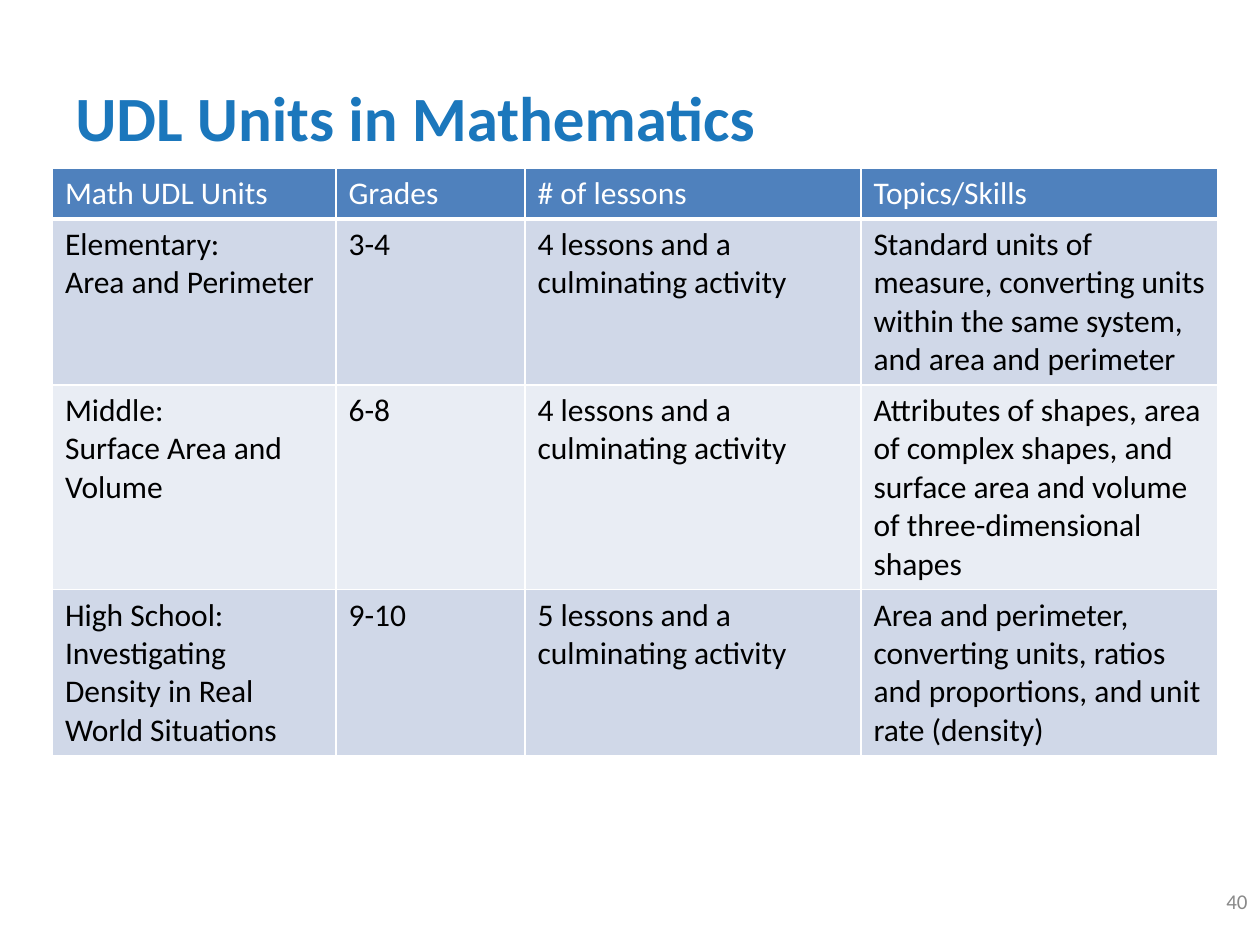
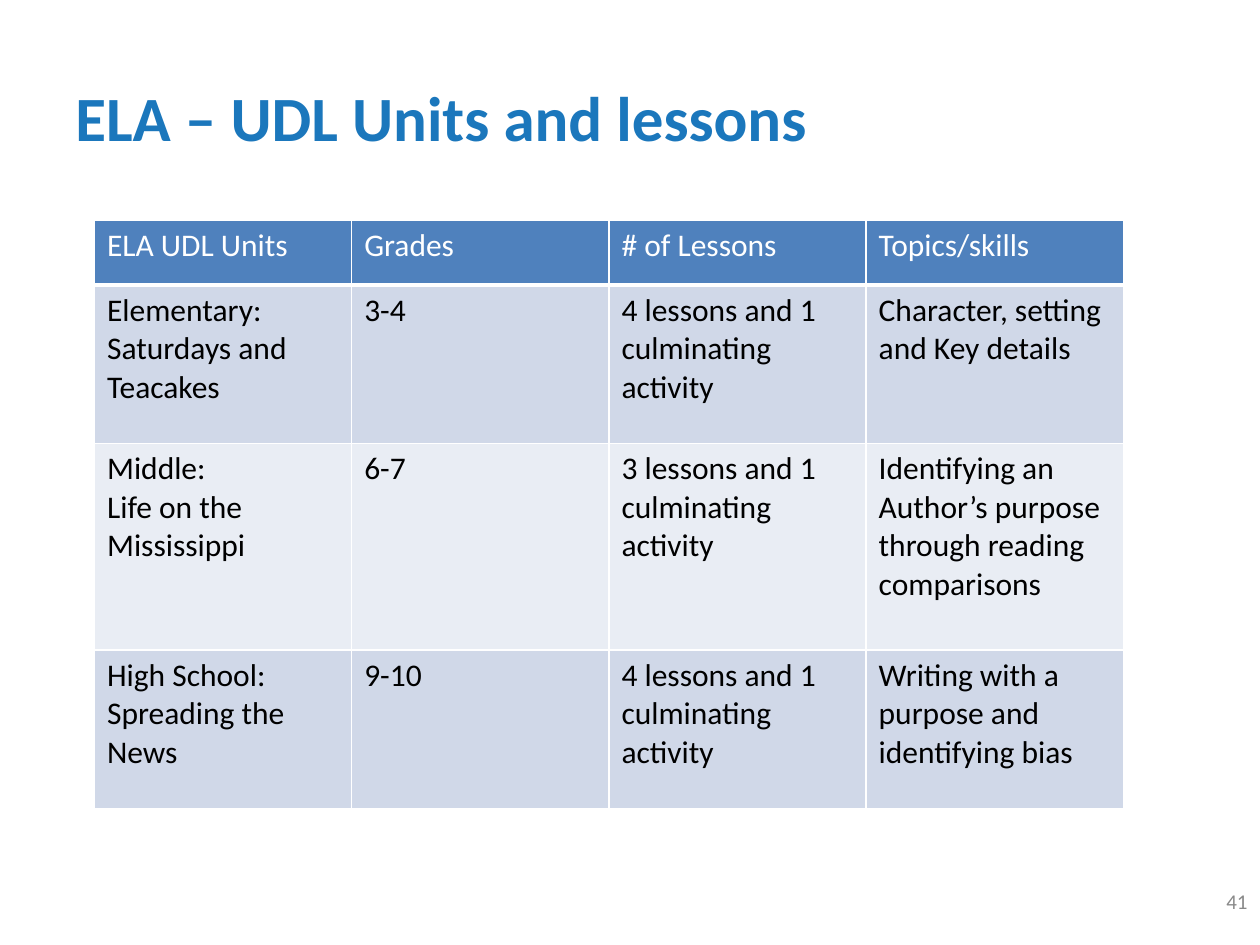
"""Build two slides that list the UDL units in mathematics and in ELA."""
from lxml.etree import SubElement
from pptx import Presentation
from pptx.dml.color import RGBColor
from pptx.enum.text import MSO_ANCHOR, PP_ALIGN
from pptx.oxml import parse_xml
from pptx.oxml.ns import nsdecls, qn
from pptx.util import Pt

COLORS = {
    "title": "1B77BC",
    "header": "4F81BD",
    "band_dark": "D0D8E8",
    "band_light": "E9EDF4",
    "white": "FFFFFF",
    "text": "000000",
    "number": "898989",
}


class Deck:
    def __init__(self, width, height):
        self.prs = Presentation()
        self.prs.slide_width, self.prs.slide_height = Pt(width), Pt(height)
        self.font = "Calibri"
        self.s = None

    def add_run(self, p, text, size, color, bold=False):
        r = p.add_run()
        r.text = text
        r.font.name, r.font.size, r.font.bold = self.font, Pt(size), bold
        r.font.color.rgb = RGBColor.from_string(COLORS[color])

    def add_text(self, box, text, size, color, bold=False, align=PP_ALIGN.LEFT):
        sp = self.s.shapes.add_textbox(*map(Pt, box))
        tf = sp.text_frame
        tf.word_wrap = True
        tf.vertical_anchor = MSO_ANCHOR.MIDDLE
        p = tf.paragraphs[0]
        p.alignment = align
        self.add_run(p, text, size, color, bold)

    def add_slide(self, title, number):
        self.s = self.prs.slides.add_slide(self.prs.slide_layouts[6])
        self.add_text((36, 21.6, 648, 90), title, 36, "title", bold=True)
        self.add_text((552, 500.4, 168, 28.8), str(number), 12, "number",
                      align=PP_ALIGN.RIGHT)

    def add_borders(self, cell, bottom):
        tc_pr = cell._tc.get_or_add_tcPr()
        widths = {"lnL": 1, "lnR": 1, "lnT": 1, "lnB": bottom}
        for i, (side, width) in enumerate(widths.items()):
            ln = parse_xml(f'<a:{side} {nsdecls("a")} w="{Pt(width)}"/>')
            fill = SubElement(ln, qn("a:solidFill"))
            SubElement(fill, qn("a:srgbClr"), val=COLORS["white"])
            tc_pr.insert(i, ln)

    def fill_cell(self, cell, text, fill, color, bottom):
        cell.fill.solid()
        cell.fill.fore_color.rgb = RGBColor.from_string(COLORS[fill])
        self.add_borders(cell, bottom)
        tf = cell.text_frame
        for i, line in enumerate(text.split("\n")):
            p = tf.add_paragraph() if i else tf.paragraphs[0]
            self.add_run(p, line, 18, color)

    def add_table(self, left, top, widths, heights, rows):
        frame = self.s.shapes.add_table(
            len(rows), len(widths), Pt(left), Pt(top),
            Pt(sum(widths)), Pt(sum(heights)))
        table = frame.table
        table.horz_banding = False
        for column, width in zip(table.columns, widths):
            column.width = Pt(width)
        for i, (row, height, texts) in enumerate(zip(table.rows, heights, rows)):
            row.height = Pt(height)
            if i == 0:
                style = ("header", "white", 3)
            else:
                style = ("band_dark" if i % 2 else "band_light", "text", 1)
            for cell, text in zip(row.cells, texts):
                self.fill_cell(cell, text, *style)


MATH_UNITS = [
    ("Math UDL Units", "Grades", "# of lessons", "Topics/Skills"),
    ("Elementary:\nArea and Perimeter", "3-4",
     "4 lessons and a culminating activity",
     "Standard units of measure, converting units within the same system, "
     "and area and perimeter"),
    ("Middle:\nSurface Area and Volume", "6-8",
     "4 lessons and a culminating activity",
     "Attributes of shapes, area of complex shapes, and surface area and "
     "volume of three-dimensional shapes"),
    ("High School:\nInvestigating Density in Real World Situations", "9-10",
     "5 lessons and a culminating activity",
     "Area and perimeter, converting units, ratios and proportions, "
     "and unit rate (density)"),
]

ELA_UNITS = [
    ("ELA UDL Units", "Grades", "# of Lessons", "Topics/skills"),
    ("Elementary:\nSaturdays and Teacakes", "3-4",
     "4 lessons and 1 culminating activity",
     "Character, setting and Key details"),
    ("Middle:\nLife on the Mississippi", "6-7",
     "3 lessons and 1 culminating activity",
     "Identifying an Author’s purpose through reading comparisons"),
    ("High School:\nSpreading the News", "9-10",
     "4 lessons and 1 culminating activity",
     "Writing with a purpose and identifying bias"),
]


def main():
    deck = Deck(720, 540)
    deck.add_slide("UDL Units in Mathematics", 40)
    deck.add_table(30, 96, [162, 108, 192, 204], [29.2, 94.8, 117, 94.8],
                   MATH_UNITS)
    deck.add_slide("ELA – UDL Units and lessons", 41)
    deck.add_table(54, 126, [147] * 4, [36.8, 90.6, 118, 90.6], ELA_UNITS)
    deck.prs.save("out.pptx")


if __name__ == "__main__":
    main()
